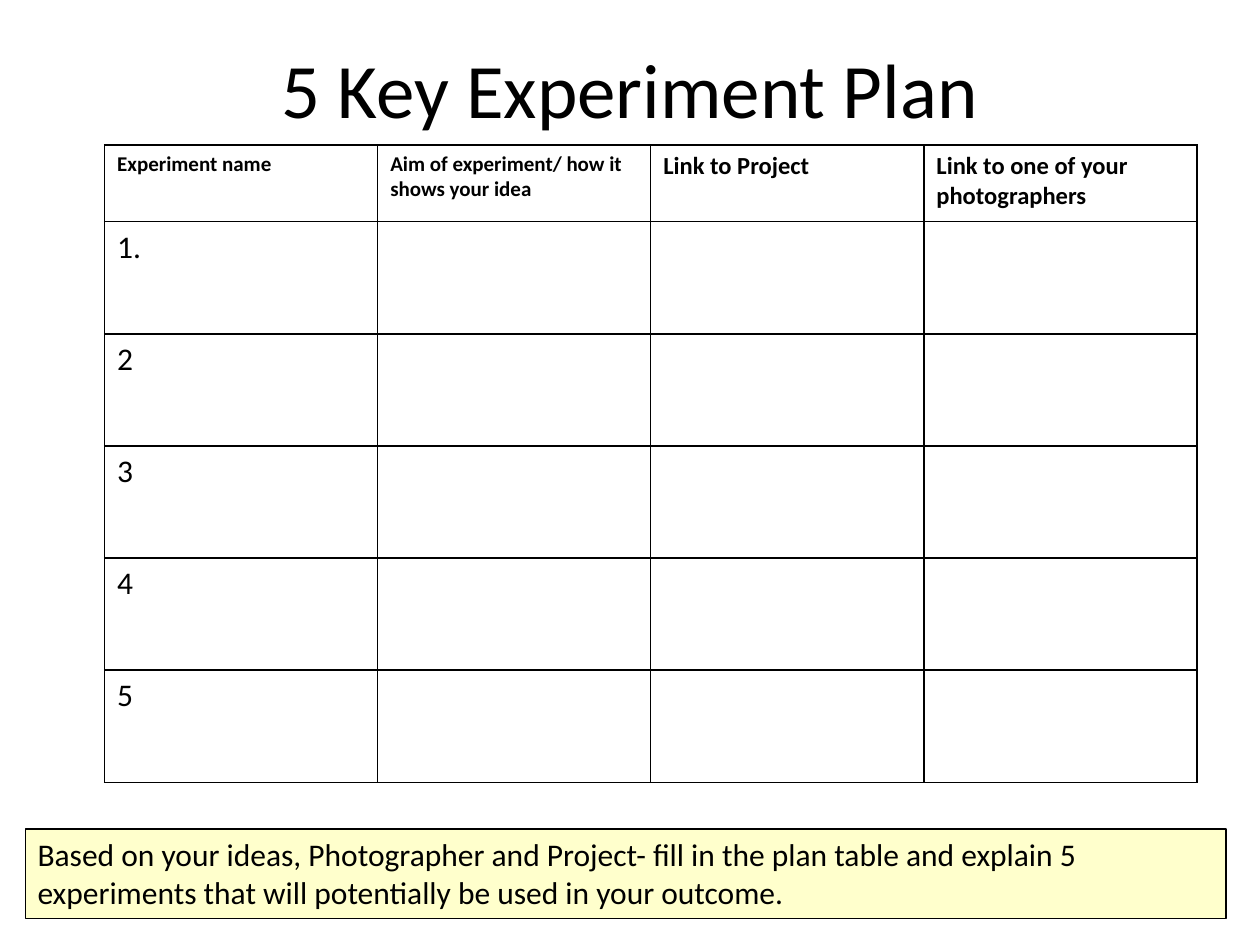
from lxml.etree import SubElement
from pptx import Presentation
from pptx.dml.color import RGBColor
from pptx.enum.shapes import MSO_SHAPE as Shape
from pptx.enum.text import MSO_ANCHOR as Anchor, MSO_AUTO_SIZE as AutoSize, PP_ALIGN as Align
from pptx.oxml.ns import qn
from pptx.util import Inches, Pt

BLACK = RGBColor(0x00, 0x00, 0x00)
WHITE = RGBColor(0xFF, 0xFF, 0xFF)
PALE_YELLOW = RGBColor(0xFF, 0xFF, 0xCC)
FONT = "Calibri"

HEADINGS = [
    ("Experiment name", 12),
    ("Aim of experiment/ how it shows your idea", 12),
    ("Link to Project", 14),
    ("Link to one of your photographers", 14),
]
EXPERIMENTS = ["1.", "2", "3", "4", "5"]
INSTRUCTION = (
    "Based on your ideas, Photographer and Project- fill in the plan table and explain 5 "
    "experiments that will potentially be used in your outcome."
)


def write_text(frame, text, size, bold=False, align=Align.LEFT):
    """Write one formatted paragraph into a text frame."""
    paragraph = frame.paragraphs[0]
    paragraph.alignment = align
    run = paragraph.add_run()
    run.text = text
    run.font.color.rgb = BLACK
    for name, value in {"name": FONT, "size": Pt(size), "bold": bold}.items():
        setattr(run.font, name, value)


def add_title(slide, text):
    """Add the centred slide title."""
    title = slide.shapes.add_textbox(Inches(0.5), Inches(0.07), Inches(9), Inches(1.25))
    frame = title.text_frame
    for name, value in {"word_wrap": True, "vertical_anchor": Anchor.MIDDLE}.items():
        setattr(frame, name, value)
    write_text(frame, text, 44, align=Align.CENTER)


def add_instruction(slide, text):
    """Add the outlined instruction box."""
    box = slide.shapes.add_shape(
        Shape.RECTANGLE, Inches(0.2), Inches(6.58), Inches(9.53), Inches(0.71)
    )
    box.shadow.inherit = False
    box.fill.solid()
    box.fill.fore_color.rgb = PALE_YELLOW
    box.line.color.rgb = BLACK
    box.line.width = Pt(0.75)
    layout = {
        "word_wrap": True,
        "auto_size": AutoSize.SHAPE_TO_FIT_TEXT,
        "vertical_anchor": Anchor.TOP,
    }
    for name, value in layout.items():
        setattr(box.text_frame, name, value)
    write_text(box.text_frame, text, 18)


def style_cell(cell):
    """Give a cell black borders and a white fill."""
    properties = cell._tc.get_or_add_tcPr()
    for side in ("lnL", "lnR", "lnT", "lnB"):
        border = SubElement(properties, qn(f"a:{side}"), w=str(Pt(1)))
        fill = SubElement(border, qn("a:solidFill"))
        SubElement(fill, qn("a:srgbClr"), val=str(BLACK))
    cell.fill.solid()
    cell.fill.fore_color.rgb = WHITE


def add_plan_table(slide):
    """Add the table with its headings and numbered rows."""
    heading_height, row_height = Inches(0.61), Inches(0.89)
    table = slide.shapes.add_table(
        len(EXPERIMENTS) + 1, len(HEADINGS),
        Inches(0.83), Inches(1.15), Inches(8.67),
        heading_height + row_height * len(EXPERIMENTS),
    ).table
    for row in table.rows:
        row.height = row_height
    table.rows[0].height = heading_height
    for cell in table.iter_cells():
        style_cell(cell)
    for column, (heading, size) in enumerate(HEADINGS):
        write_text(table.cell(0, column).text_frame, heading, size, bold=True)
    for row, number in enumerate(EXPERIMENTS, start=1):
        write_text(table.cell(row, 0).text_frame, number, 18)


def main():
    """Build and save the experiment plan slide."""
    presentation = Presentation()
    presentation.slide_width = Inches(10)
    presentation.slide_height = Inches(7.5)
    slide = presentation.slides.add_slide(presentation.slide_layouts[6])
    add_title(slide, "5 Key Experiment Plan")
    add_instruction(slide, INSTRUCTION)
    add_plan_table(slide)
    presentation.save("out.pptx")


if __name__ == "__main__":
    main()
